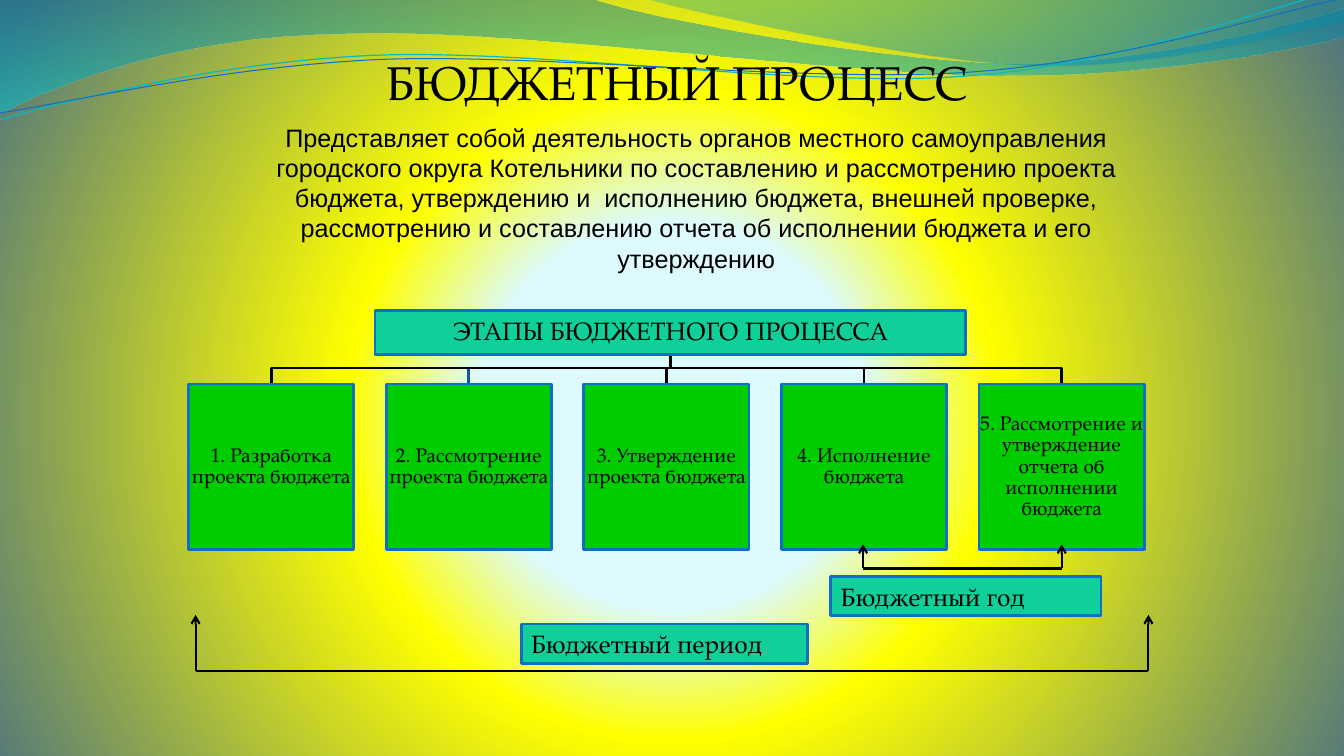
import math
from dataclasses import dataclass
from typing import Optional

from lxml import etree
from pptx import Presentation
from pptx.dml.color import RGBColor
from pptx.enum import shapes, text
from pptx.oxml import ns
from pptx.util import Inches, Pt

COLORS = {
    "black": "000000", "blue": "0F6FC6", "dark_blue": "0C599F", "cyan": "0AB8BF",
    "teal": "10CF9B", "green": "00CC00",
}
SERIF, SANS = "TeX Gyre Pagella", "Arial"
CENTER, LEFT = text.PP_ALIGN.CENTER, text.PP_ALIGN.LEFT
TILT = 2.7  # degrees the thin waves lean upwards to the right


@dataclass
class Wave:
    start: tuple
    segments: list  # two numbers make a line, six make a cubic curve
    stops: Optional[list] = None  # position, colour, opacity
    line: str = ""
    width: float = 0
    pivot: Optional[tuple] = None  # centre of a tilted wave


@dataclass
class Box:
    label: str
    left: float
    top: float
    width: float
    height: float
    size: float = 18
    fill: str = ""
    font: str = SERIF
    align: int = CENTER
    inset: Optional[float] = None
    spacing: float = 1.0


@dataclass
class Line:
    start: tuple
    end: tuple
    arrow: bool = False


def rgb(name: str) -> RGBColor:
    return RGBColor.from_string(COLORS[name])


def set_gradient(owner, stops: list, direction: etree._Element) -> None:
    """Fill the gradient element inside owner with stops and a direction."""
    grad = owner.find(".//" + ns.qn("a:gradFill"))
    for child in list(grad):
        grad.remove(child)
    gs_list = etree.SubElement(grad, ns.qn("a:gsLst"))
    for position, color, opacity in stops:
        gs = etree.SubElement(gs_list, ns.qn("a:gs"), pos=str(position * 1000))
        clr = etree.SubElement(gs, ns.qn("a:srgbClr"), val=color)
        if opacity < 100:
            etree.SubElement(clr, ns.qn("a:alpha"), val=str(opacity * 1000))
    grad.append(direction)


def level(point: tuple, pivot: tuple) -> tuple:
    """Turn a point of a tilted wave back to the level position."""
    a = math.radians(TILT)
    x, y = point[0] - pivot[0], point[1] - pivot[1]
    return (pivot[0] + x * math.cos(a) - y * math.sin(a),
            pivot[1] + x * math.sin(a) + y * math.cos(a))


def draw_path(slide, points: list, closed: bool = False):
    emu = [(Inches(x), Inches(y)) for x, y in points]
    builder = slide.shapes.build_freeform(*emu[0])
    builder.add_line_segments(emu[1:], close=closed)
    sp = builder.convert_to_shape()
    sp.shadow.inherit = False
    return sp


def bend(sp, segments: list) -> None:
    """Join the points of each six-number segment into one cubic curve."""
    lines = iter(sp.element.findall(".//" + ns.qn("a:lnTo")))
    for seg in segments:
        steps = [next(lines) for _ in range(len(seg) // 2)]
        if len(steps) == 3:
            curve = etree.Element(ns.qn("a:cubicBezTo"))
            steps[0].addprevious(curve)
            for step in steps:
                curve.append(step[0])
                step.getparent().remove(step)


def set_line(sp, color: str, width: float) -> None:
    sp.line.color.rgb = rgb(color)
    sp.line.width = Pt(width)


def draw_wave(slide, wave: Wave) -> None:
    points = [wave.start] + [seg[i:i + 2] for seg in wave.segments
                             for i in range(0, len(seg), 2)]
    if wave.pivot:
        points = [level(point, wave.pivot) for point in points]
    sp = draw_path(slide, points, bool(wave.stops))
    bend(sp, wave.segments)
    if wave.stops:
        sp.fill.gradient()
        down = etree.Element(ns.qn("a:lin"), ang="5400000", scaled="0")
        set_gradient(sp.element, wave.stops, down)
        sp.line.fill.background()
    else:
        sp.rotation = 360 - TILT
        sp.fill.background()
        set_line(sp, wave.line, wave.width)


def draw_box(slide, box: Box) -> None:
    area = [Inches(v) for v in (box.left, box.top, box.width, box.height)]
    if box.fill:
        sp = slide.shapes.add_shape(shapes.MSO_SHAPE.RECTANGLE, *area)
        sp.shadow.inherit = False
        sp.fill.solid()
        sp.fill.fore_color.rgb = rgb(box.fill)
        set_line(sp, "blue", 2)
    else:
        sp = slide.shapes.add_textbox(*area)
    tf = sp.text_frame
    tf.word_wrap = True
    tf.vertical_anchor = text.MSO_ANCHOR.MIDDLE if box.fill else text.MSO_ANCHOR.TOP
    if box.inset is not None:
        tf.margin_left = tf.margin_right = Inches(box.inset)
        tf.margin_top = tf.margin_bottom = Inches(box.inset)
    tf.text = box.label
    p = tf.paragraphs[0]
    p.alignment, p.line_spacing = box.align, box.spacing
    font = p.runs[0].font
    font.name, font.size = box.font, Pt(box.size)
    font.color.rgb = rgb("black")


def draw_line(slide, line: Line) -> None:
    ends = [Inches(v) for v in (*line.start, *line.end)]
    cxn = slide.shapes.add_connector(shapes.MSO_CONNECTOR.STRAIGHT, *ends)
    set_line(cxn, "black", 1.5)
    if line.arrow:
        ln = cxn.element.spPr.find(ns.qn("a:ln"))
        etree.SubElement(ln, ns.qn("a:tailEnd"), type="arrow")
    etree.SubElement(cxn.element.spPr, ns.qn("a:effectLst"))


WAVES = [
    Wave((0, 0), [(5.87, -0.01), (6.34, 0.17, 8.85, 0.63, 10.11, 0.63),
                  (11.38, 0.63, 12.78, 0.26, 13.33, 0.09), (13.35, 0.36),
                  (13.11, 0.44, 11.6, 0.76, 9.94, 0.75), (8.29, 0.75, 5.09, 0.28, 3.43, 0.34),
                  (1.72, 0.36, 0.61, 0.83, -0.01, 1.13)],
         stops=[(0, "0074A1", 45), (100, "00C6CF", 55)]),
    Wave((6.39, -0.01), [(6.79, 0.11, 9.09, 0.62, 10.25, 0.65),
                         (11.41, 0.69, 12.82, 0.32, 13.33, 0.21), (13.33, 0)],
         stops=[(0, "00A1A9", 30), (80, "008BBF", 45)]),
    Wave((-0.01, 1.19), [(0.64, 1.01, 2.11, 0.62, 3.69, 0.55), (5.27, 0.48, 7.9, 0.87, 9.5, 0.76),
                         (11.1, 0.66, 12.52, 0.08, 13.31, -0.1)],
         line="cyan", width=0.85, pivot=(6.65, 0.58)),
    Wave((0, 1.12), [(0.63, 1.03, 2.18, 0.66, 3.78, 0.59), (5.37, 0.53, 7.96, 0.82, 9.55, 0.72),
                     (11.15, 0.62, 12.55, 0.14, 13.34, -0.02)],
         line="blue", width=0.75, pivot=(6.67, 0.59)),
]
HEADINGS = [
    Box("БЮДЖЕТНЫЙ ПРОЦЕСС", 3.17, 0.48, 7.09, 0.67, 34),
    Box("Представляет собой деятельность органов местного самоуправления городского "
        "округа Котельники по составлению и рассмотрению проекта бюджета, утверждению и  "
        "исполнению бюджета, внешней проверке, рассмотрению и составлению отчета об "
        "исполнении бюджета и его утверждению", 2.18, 1.16, 9.45, 1.62, font=SANS),
]
STAGES = [
    "1. Разработка проекта бюджета", "2. Рассмотрение проекта бюджета",
    "3. Утверждение проекта бюджета", "4. Исполнение бюджета",
    "5. Рассмотрение и утверждение отчета об исполнении бюджета",
]
STAGE_LEFT, STAGE_TOP, STAGE_SIZE, STAGE_PITCH = 1.87, 3.81, 1.64, 1.96
ROOT = Box("ЭТАПЫ БЮДЖЕТНОГО ПРОЦЕССА", 3.72, 3.08, 5.86, 0.44, fill="teal",
           inset=0.01, spacing=0.9)
PERIODS = [
    Box("Бюджетный год", 8.24, 5.72, 2.68, 0.39, fill="teal", align=LEFT),
    Box("Бюджетный период", 5.17, 6.19, 2.84, 0.39, fill="teal", align=LEFT),
]
# Brackets: left, right, base, arrow tip
BRACKETS = [(1.94, 11.39, 6.66, 6.1), (8.56, 10.53, 5.64, 5.4)]


def main() -> None:
    prs = Presentation()
    prs.slide_width, prs.slide_height = Inches(13.33), Inches(7.5)
    slide = prs.slides.add_slide(prs.slide_layouts[6])
    # Background glow
    slide.background.fill.gradient()
    circle = etree.Element(ns.qn("a:path"), path="circle")
    etree.SubElement(circle, ns.qn("a:fillToRect"), l="10000", t="110000", r="10000", b="100000")
    set_gradient(slide.element,
                 [(25, "DDFAFF", 100), (42, "FFFF00", 100), (100, "52767C", 100)], circle)
    # Waves, title and definition
    for wave in WAVES:
        draw_wave(slide, wave)
    for heading in HEADINGS:
        draw_box(slide, heading)
    # Branches, drawn below the boxes
    root_x, root_y, bend_y = ROOT.left + ROOT.width / 2, ROOT.top + ROOT.height, 3.65
    lefts = [STAGE_LEFT + i * STAGE_PITCH for i in range(len(STAGES))]
    for i in reversed(range(len(STAGES))):
        x = lefts[i] + STAGE_SIZE / 2
        branch = draw_path(slide, [(root_x, root_y), (root_x, bend_y), (x, bend_y), (x, STAGE_TOP)])
        branch.fill.background()
        set_line(branch, "dark_blue" if i == 1 else "black", 2)
    # Stage boxes and periods
    stages = [Box(label, left, STAGE_TOP, STAGE_SIZE, STAGE_SIZE, 14, "green",
                  inset=0.01, spacing=0.9) for label, left in zip(STAGES, lefts)]
    for box in [ROOT, *stages, *PERIODS]:
        draw_box(slide, box)
    # Period brackets
    for left, right, base, tip in BRACKETS:
        draw_line(slide, Line((left, base), (left, tip), arrow=True))
        draw_line(slide, Line((left, base), (right, base)))
        draw_line(slide, Line((right, base), (right, tip), arrow=True))
    prs.save("out.pptx")


if __name__ == "__main__":
    main()
